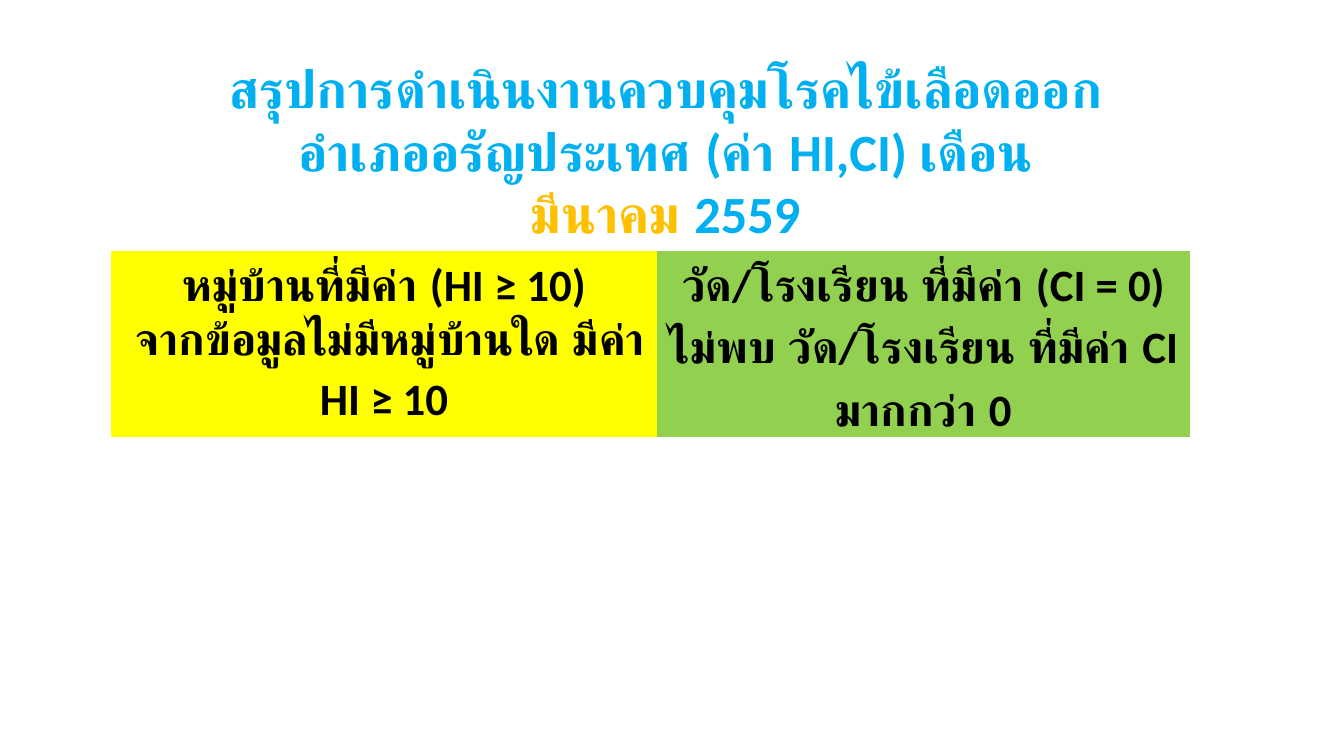
from pptx import Presentation
from pptx.dml.color import RGBColor
from pptx.enum.text import MSO_AUTO_SIZE, PP_ALIGN
from pptx.oxml.ns import qn
from pptx.util import Pt

FONT = "Calibri"
BLUE = RGBColor(0x00, 0xB0, 0xF0)
GOLD = RGBColor(0xFF, 0xC0, 0x00)
BLACK = RGBColor(0x00, 0x00, 0x00)
YELLOW = RGBColor(0xFF, 0xFF, 0x00)
GREEN = RGBColor(0x92, 0xD0, 0x50)
NO_GRID_STYLE = "{2D5ABB26-0587-4C30-8999-92F81FD0307C}"

TITLE = [
    ("สรุปการดำเนินงานควบคุมโรคไข้เลือดออก อำเภออรัญประเทศ (ค่า HI,CI) เดือน ", BLUE),
    ("มีนาคม ", GOLD),
    ("2559", BLUE),
]
FINDINGS = [
    ["หมู่บ้านที่มีค่า (HI ≥ 10)", "วัด/โรงเรียน ที่มีค่า (CI = 0)"],
    [" จากข้อมูลไม่มีหมู่บ้านใด มีค่า HI ≥ 10", "ไม่พบ วัด/โรงเรียน ที่มีค่า CI มากกว่า 0"],
]
COLUMN_WIDTHS = [292.5, 285.5]
COLUMN_FILLS = [YELLOW, GREEN]
ROW_HEIGHT = 23


def format_span(span, size, color):
    span.font.name = FONT
    span.font.size = Pt(size)
    span.font.bold = True
    span.font.color.rgb = color


def add_title(page):
    box = page.shapes.add_textbox(Pt(110), Pt(26.5), Pt(493), Pt(75))
    frame = box.text_frame
    frame.word_wrap = True
    frame.auto_size = MSO_AUTO_SIZE.SHAPE_TO_FIT_TEXT
    para = frame.paragraphs[0]
    para.alignment = PP_ALIGN.CENTER
    for text, color in TITLE:
        span = para.add_run()
        span.text = text
        format_span(span, 28, color)


def fill_cell(cell, text, fill):
    cell.fill.solid()
    cell.fill.fore_color.rgb = fill
    cell.margin_left = cell.margin_right = Pt(3.6)
    cell.margin_top = cell.margin_bottom = Pt(0)
    para = cell.text_frame.paragraphs[0]
    para.text = text
    para.alignment = PP_ALIGN.CENTER
    para.line_spacing = 1.15
    format_span(para.runs[0], 24, BLACK)


def add_findings_table(page):
    holder = page.shapes.add_table(
        len(FINDINGS), len(COLUMN_WIDTHS), Pt(59.5), Pt(134.5),
        Pt(sum(COLUMN_WIDTHS)), Pt(ROW_HEIGHT * len(FINDINGS)))
    next(holder.element.iter(qn("a:tableStyleId"))).text = NO_GRID_STYLE
    table = holder.table
    for column, width in zip(table.columns, COLUMN_WIDTHS):
        column.width = Pt(width)
    for row, texts in zip(table.rows, FINDINGS):
        row.height = Pt(ROW_HEIGHT)
        for cell, text, fill in zip(row.cells, texts, COLUMN_FILLS):
            fill_cell(cell, text, fill)


def main():
    deck = Presentation()
    deck.slide_width, deck.slide_height = Pt(720), Pt(405)
    page = deck.slides.add_slide(deck.slide_layouts[6])
    add_title(page)
    add_findings_table(page)
    deck.save("out.pptx")


if __name__ == "__main__":
    main()
